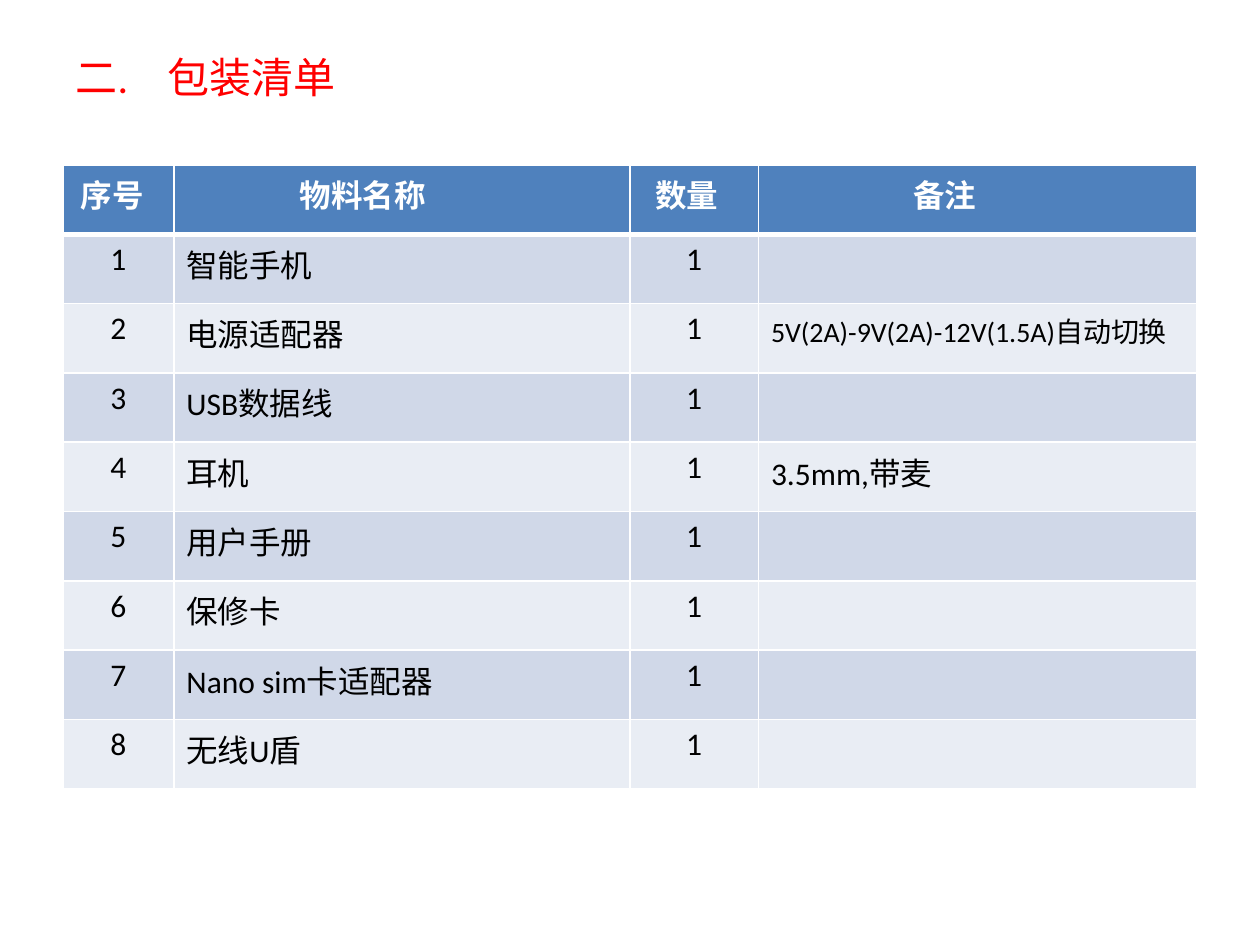
from lxml import etree
from pptx import Presentation
from pptx import util as u
from pptx.dml.color import RGBColor
from pptx.enum import text
from pptx.oxml import ns

RED = RGBColor(0xFF, 0x00, 0x00)
WHITE = RGBColor(0xFF, 0xFF, 0xFF)
BLACK = RGBColor(0x00, 0x00, 0x00)
HEADER_BLUE = RGBColor(0x4F, 0x81, 0xBD)
BANDS = (RGBColor(0xD0, 0xD8, 0xE8), RGBColor(0xE9, 0xED, 0xF4))

FONT = "Calibri"
COLUMN_WIDTHS = (0.88, 3.62, 1.02, 3.48)
ROW_HEIGHT = 0.55
CELL_INSET = 0.1
HEADERS = ("序号", "物料名称", "数量", "备注")
HEADER_INDENTS = (0.04, 0.9, 0.1, 1.13)
CENTRED_COLUMNS = (0, 2)
ITEMS = (
    ("智能手机", ""),
    ("电源适配器", "5V(2A)-9V(2A)-12V(1.5A)自动切换"),
    ("USB数据线", ""),
    ("耳机", "3.5mm,带麦"),
    ("用户手册", ""),
    ("保修卡", ""),
    ("Nano sim卡适配器", ""),
    ("无线U盾", ""),
)
LONG_NOTE = 20  # notes beyond this many characters are set smaller


def style_font(font, size, color, bold=False):
    font.name = FONT
    font.size = u.Pt(size)
    font.bold = bold
    font.color.rgb = color


def set_borders(cell, bottom=1, top=1):
    """Draw white cell rules; line elements must precede the fill."""
    properties = cell._tc.get_or_add_tcPr()
    widths = {"lnL": 1, "lnR": 1, "lnT": top, "lnB": bottom}
    for position, (side, width) in enumerate(widths.items()):
        line = etree.Element(ns.qn(f"a:{side}"), w=str(u.Pt(width)))
        fill = etree.SubElement(line, ns.qn("a:solidFill"))
        etree.SubElement(fill, ns.qn("a:srgbClr"), val=str(WHITE))
        properties.insert(position, line)


def place_title(slide, left, top, width, height):
    title = slide.shapes.title
    title.left, title.top, title.width, title.height = map(
        u.Inches, (left, top, width, height))
    frame = title.text_frame
    frame.vertical_anchor = text.MSO_ANCHOR.MIDDLE
    frame.text = "二.\t包装清单"
    heading = frame.paragraphs[0]
    heading.alignment = text.PP_ALIGN.LEFT
    # The tab stop separates the section number from its name
    tabs = etree.SubElement(heading._p.get_or_add_pPr(), ns.qn("a:tabLst"))
    etree.SubElement(tabs, ns.qn("a:tab"), pos=str(u.Inches(0.73)), algn="l")
    for run in heading.runs:
        style_font(run.font, 24, RED)


def fill_cell(cell, words, fill, size, color, bold=False):
    cell.fill.solid()
    cell.fill.fore_color.rgb = fill
    cell.text_frame.text = words
    style_font(cell.text_frame.paragraphs[0].font, size, color, bold)
    for run in cell.text_frame.paragraphs[0].runs:
        style_font(run.font, size, color, bold)


def place_packing_list(slide, left, top, width):
    rows = len(ITEMS) + 1
    table = slide.shapes.add_table(
        rows, len(HEADERS), u.Inches(left), u.Inches(top),
        u.Inches(width), u.Inches(ROW_HEIGHT * rows)).table
    for column, share in zip(table.columns, COLUMN_WIDTHS):
        column.width = u.Inches(width * share / sum(COLUMN_WIDTHS))
    for row in table.rows:
        row.height = u.Inches(ROW_HEIGHT)

    # Header row
    for col, (header, indent) in enumerate(zip(HEADERS, HEADER_INDENTS)):
        cell = table.cell(0, col)
        fill_cell(cell, header, HEADER_BLUE, 18, WHITE, bold=True)
        cell.margin_left = u.Inches(CELL_INSET + indent)
        set_borders(cell, bottom=3)

    # One numbered row per item, each with a quantity of one
    for number, (item, note) in enumerate(ITEMS, start=1):
        band = BANDS[(number - 1) % len(BANDS)]
        for col, words in enumerate((str(number), item, "1", note)):
            cell = table.cell(number, col)
            size = 16 if len(words) > LONG_NOTE else 18
            fill_cell(cell, words, band, size, BLACK)
            if col in CENTRED_COLUMNS:
                cell.text_frame.paragraphs[0].alignment = text.PP_ALIGN.CENTER
            set_borders(cell, top=3 if number == 1 else 1)


def main():
    deck = Presentation()
    deck.slide_width, deck.slide_height = u.Inches(10), u.Inches(7.5)
    slide = deck.slides.add_slide(deck.slide_layouts.get_by_name("Title Only"))
    place_title(slide, 0.5, 0.3, 9, 0.61)
    place_packing_list(slide, 0.5, 1.31, 9)
    deck.save("out.pptx")


if __name__ == "__main__":
    main()
